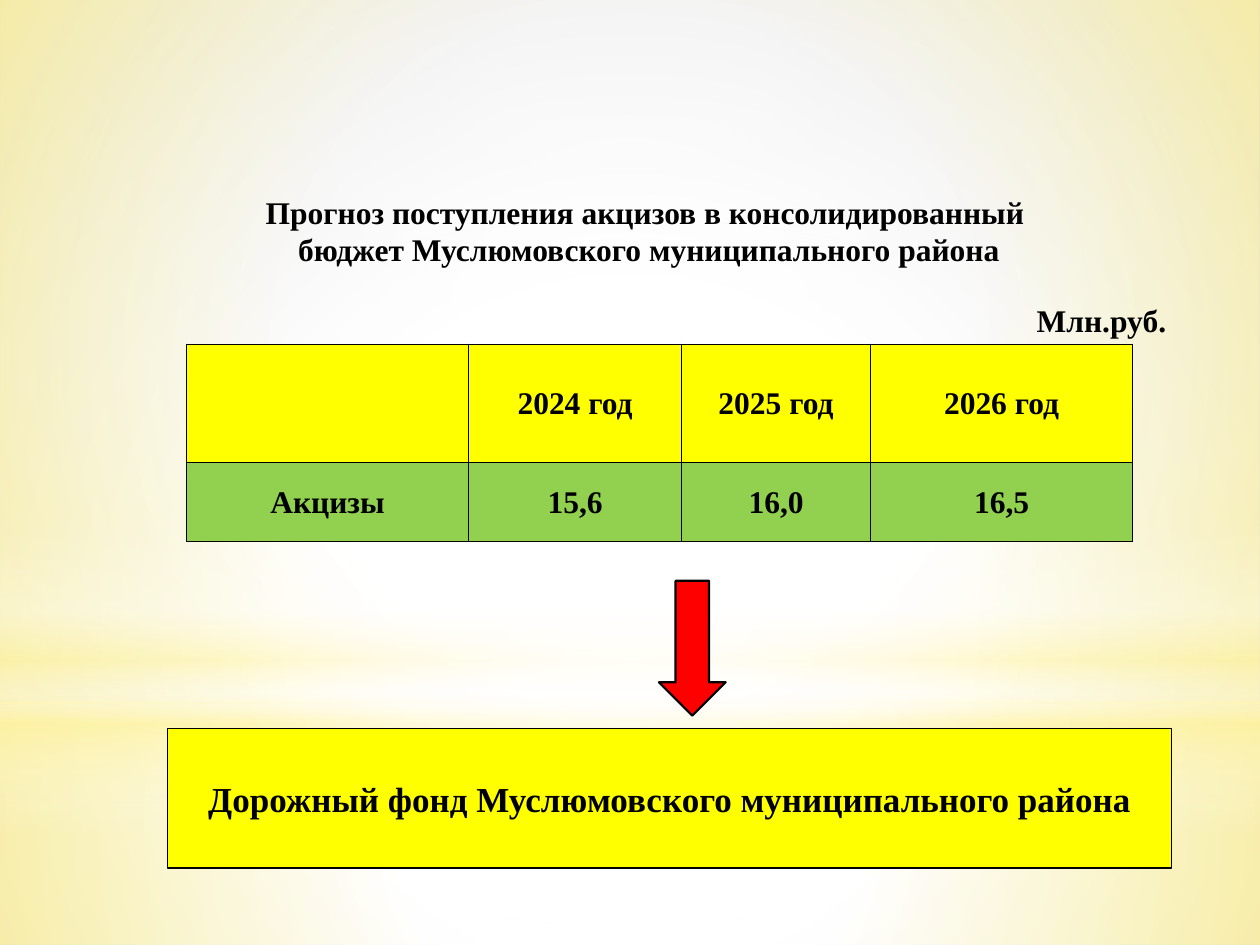
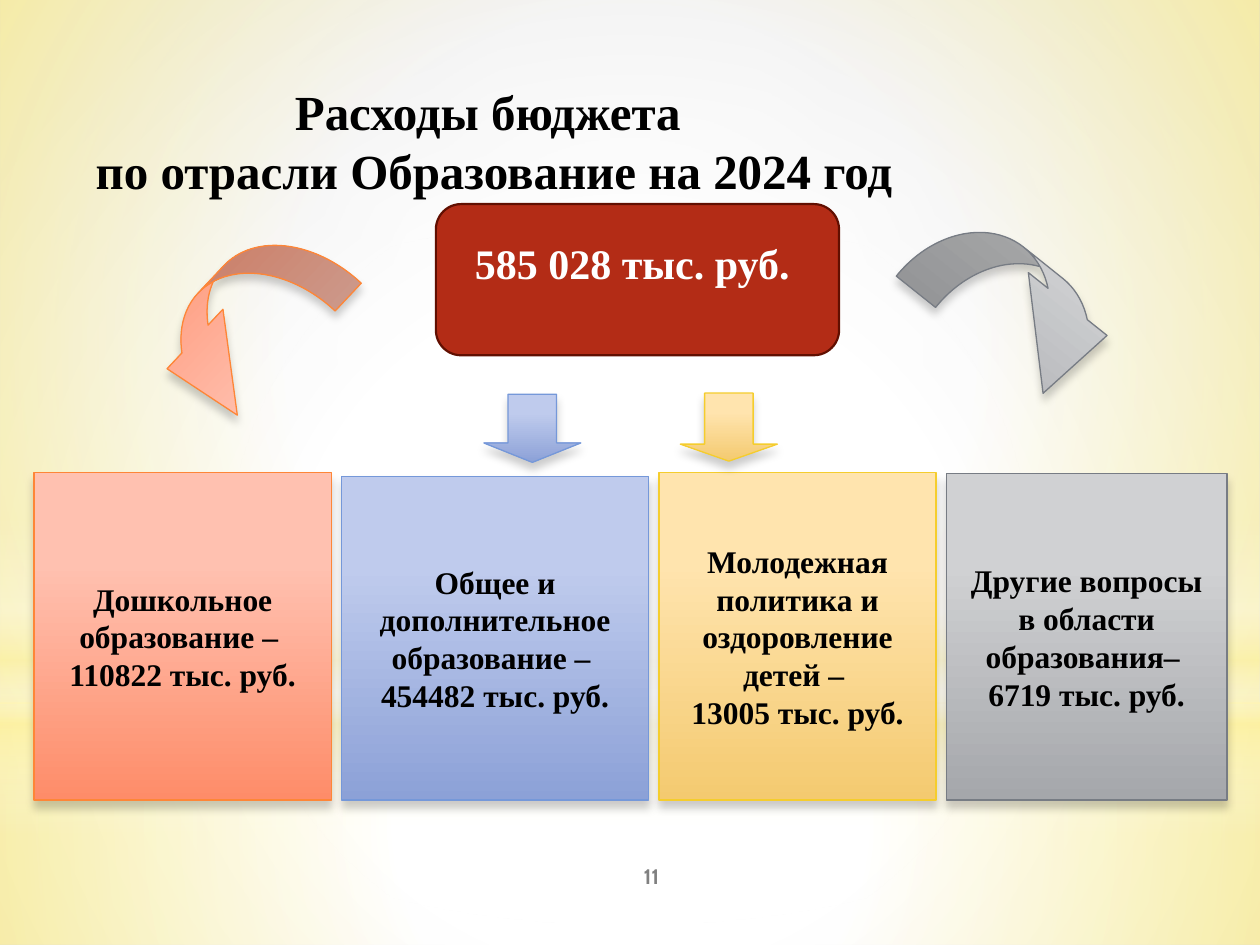
from lxml import etree
from pptx import Presentation
from pptx.dml.color import RGBColor
from pptx.enum import shapes, text
from pptx.oxml import ns
from pptx.util import Inches, Pt

SERIF = "Times New Roman"
BLACK, WHITE, YELLOW, GREEN, RED = "000000", "FFFFFF", "FFFF00", "92D050", "FF0000"
GLOW, BRICK, BRICK_EDGE, PAGE_GREY = "FFF39D", "B32C16", "610F01", "808080"
CORAL = ("FFC1B0", "FE8C69", "FE8637")
BLUE = ("BFCBED", "8CA1D7", "7598D9")
AMBER = ("FFE4AE", "F4CA70", "F5CD2D")
GREY = ("D0D1D3", "A5A7AB", "777C84")
CENTRE = (50, 50, 50, 50)
FORMS = shapes.MSO_SHAPE
MIDDLE = text.MSO_ANCHOR.MIDDLE


def colour(code):
    return RGBColor.from_string(code)


def child(parent, tag, **attributes):
    element = etree.SubElement(parent, ns.qn(tag))
    for key, value in attributes.items():
        element.set(key, str(value))
    return element


def paint_gradient(fill, holder, stops, focus=None):
    fill.solid()
    plain = holder.find(ns.qn("a:solidFill"))
    gradient = etree.Element(ns.qn("a:gradFill"), rotWithShape="1")
    stop_list = child(gradient, "a:gsLst")
    for place, code, opacity in stops:
        stop = child(stop_list, "a:gs", pos=place * 1000)
        tint = child(stop, "a:srgbClr", val=code)
        if opacity < 100:
            child(tint, "a:alpha", val=opacity * 1000)
    if focus:
        route = child(gradient, "a:path", path="circle")
        sides = {side: share * 1000 for side, share in zip("ltrb", focus)}
        child(route, "a:fillToRect", **sides)
    else:
        child(gradient, "a:lin", ang=5400000, scaled=0)
    holder.replace(plain, gradient)


def write(frame, paragraphs, size, code=BLACK, font=SERIF, align=text.PP_ALIGN.CENTER,
          anchor=text.MSO_ANCHOR.TOP, insets=(0.1, 0.05, 0.1, 0.05), wrap=True):
    frame.word_wrap = wrap
    frame.vertical_anchor = anchor
    (frame.margin_left, frame.margin_top,
     frame.margin_right, frame.margin_bottom) = map(Inches, insets)
    for index, lines in enumerate(paragraphs):
        paragraph = frame.paragraphs[0] if index == 0 else frame.add_paragraph()
        paragraph.alignment = align
        for number, line in enumerate(lines.split("\n")):
            if number:
                paragraph.add_line_break()
            run = paragraph.add_run()
            run.text = line
            run.font.name, run.font.size, run.font.bold = font, Pt(size), True
            run.font.color.rgb = colour(code)


def label(slide, box, paragraphs, size, **style):
    caption = slide.shapes.add_textbox(*map(Inches, box))
    write(caption.text_frame, paragraphs, size, **style)


def block(slide, form, box, fill=None, edge=None, weight=0.75):
    figure = slide.shapes.add_shape(form, *map(Inches, box))
    figure.shadow.inherit = False
    if fill:
        figure.fill.solid()
        figure.fill.fore_color.rgb = colour(fill)
    if edge:
        figure.line.color.rgb = colour(edge)
        figure.line.width = Pt(weight)
    else:
        figure.line.fill.background()
    return figure


def raised(slide, form, box, palette, adjustments=(), rotation=0):
    light, deep, edge = palette
    figure = block(slide, form, box, edge=edge)
    figure.rotation = rotation
    for index, value in enumerate(adjustments):
        figure.adjustments[index] = value
    properties = figure._element.spPr
    paint_gradient(figure.fill, properties, [(28, light, 100), (100, deep, 100)])
    shadow = child(properties.find(ns.qn("a:effectLst")), "a:outerShdw",
                   blurRad=Pt(5), dist=Pt(4), dir=5400000, rotWithShape=0)
    child(child(shadow, "a:srgbClr", val=BLACK), "a:alpha", val=20000)
    return figure


def dress_master(master, slide):
    background = master.background.fill
    background.solid()
    holder = master._element.find(".//" + ns.qn("p:bgPr"))
    paint_gradient(background, holder,
                   [(0, WHITE, 100), (42, WHITE, 100), (100, "D1D1D1", 100)], (24, 44, 24, 12))
    veils = [
        (FORMS.RECTANGLE, (0, 5.58, 10, 1.92),
         [(0, WHITE, 91), (37, WHITE, 76), (100, GLOW, 79)], CENTRE),
        (FORMS.RECTANGLE, (0, 0, 10, 5.58),
         [(0, WHITE, 89), (48, WHITE, 62), (100, GLOW, 79)], CENTRE),
        (FORMS.RECTANGLE, (0, 4.12, 10, 2.5),
         [(0, WHITE, 0), (29, WHITE, 30), (45, GLOW, 40),
          (55, WHITE, 26), (65, GLOW, 60), (100, WHITE, 0)], None),
        (FORMS.OVAL, (0, 1.75, 10, 5.58), [(0, WHITE, 100), (56, WHITE, 0)], CENTRE),
    ]
    for form, box, stops, focus in veils:
        veil = block(slide, form, box)
        paint_gradient(veil.fill, veil._element.spPr, stops, focus)
        master.shapes._spTree.append(veil._element)


def outline_cell(cell):
    properties = cell._tc.get_or_add_tcPr()
    for index, side in enumerate(("a:lnL", "a:lnR", "a:lnT", "a:lnB")):
        border = etree.Element(ns.qn(side), w=str(Pt(0.5)))
        child(child(border, "a:solidFill"), "a:srgbClr", val=BLACK)
        properties.insert(index, border)


def forecast_table(slide, box):
    rows = [("", "2024 год", "2025 год", "2026 год"), ("Акцизы", "15,6", "16,0", "16,5")]
    forecast = slide.shapes.add_table(2, 4, *map(Inches, box)).table
    for column, width in zip(forecast.columns, (2.24, 1.69, 1.5, 2.08)):
        column.width = Inches(width)
    for row, (values, height, fill) in enumerate(zip(rows, (0.94, 0.63), (YELLOW, GREEN))):
        forecast.rows[row].height = Inches(height)
        for column, value in enumerate(values):
            cell = forecast.cell(row, column)
            cell.fill.solid()
            cell.fill.fore_color.rgb = colour(fill)
            outline_cell(cell)
            cell.vertical_anchor = MIDDLE
            cell.margin_left = cell.margin_right = cell.margin_top = Inches(0.01)
            cell.margin_bottom = 0
            if value:
                write(cell.text_frame, [value], 18, anchor=None, insets=(0.01, 0.01, 0.01, 0))
                cell.vertical_anchor = MIDDLE


def excise_slide(slide):
    forecast_table(slide, (1.48, 2.73, 7.5, 1.57))
    label(slide, (0.94, 1.48, 8.36, 0.71),
          ["Прогноз поступления акцизов в консолидированный",
           " бюджет Муслюмовского муниципального района"], 18)
    block(slide, FORMS.DOWN_ARROW, (5.23, 4.61, 0.53, 1.07), RED, BLACK, 1.25)
    road_fund = block(slide, FORMS.RECTANGLE, (1.33, 5.78, 7.97, 1.11), YELLOW, BLACK)
    write(road_fund.text_frame, ["Дорожный фонд Муслюмовского муниципального района"],
          20, anchor=MIDDLE)
    label(slide, (8.13, 2.34, 1.24, 0.4), ["Млн.руб."], 18,
          align=text.PP_ALIGN.LEFT, wrap=False)


def expense_cards(slide, left, bottom, gap=0.08):
    cards = [
        (2.36, 2.6, CORAL, ["Дошкольное образование – ", "110822 тыс. руб."]),
        (2.44, 2.57, BLUE, ["Общее и дополнительное", "образование – \n454482 тыс. руб."]),
        (2.2, 2.6, AMBER, ["Молодежная политика и оздоровление детей – ", "13005 тыс. руб."]),
        (2.23, 2.59, GREY, ["Другие вопросы в области образования– ", "6719 тыс. руб."]),
    ]
    for width, height, palette, wording in cards:
        card = raised(slide, FORMS.RECTANGLE, (left, bottom - height, width, height), palette)
        write(card.text_frame, wording, 18, anchor=MIDDLE, insets=(0.12, 0, 0.12, 0))
        left += width + gap


def education_slide(slide):
    total = block(slide, FORMS.ROUNDED_RECTANGLE, (3.46, 1.62, 3.2, 1.2),
                  BRICK, BRICK_EDGE, 1.25)
    write(total.text_frame, ["585 028 тыс. руб. "], 24, code=WHITE, anchor=MIDDLE,
          insets=(0.14, 0.05, 0.14, 0.32))
    expense_cards(slide, 0.27, 6.35)
    raised(slide, FORMS.CURVED_UP_ARROW, (1.06, 2.14, 1.76, 0.89), CORAL,
           (0.34, 0.727, 0.74), 133.2)
    raised(slide, FORMS.CURVED_DOWN_ARROW, (7.16, 2.06, 1.89, 0.81), GREY,
           (0.492, 0.987, 0.834), 38.6)
    raised(slide, FORMS.DOWN_ARROW, (5.4, 3.12, 0.77, 0.54), AMBER, (0.5, 0.25))
    raised(slide, FORMS.DOWN_ARROW, (3.84, 3.13, 0.77, 0.54), BLUE, (0.5, 0.285))
    label(slide, (4.17, 6.75, 2, 0.4), ["11"], 12, code=PAGE_GREY, font="Cabin", anchor=MIDDLE)
    label(slide, (0.55, 0.6, 6.74, 1.04),
          ["Расходы бюджета \nпо отрасли Образование на 2024 год"], 28)


def main():
    deck = Presentation()
    deck.slide_width, deck.slide_height = Inches(10), Inches(7.5)
    blank = deck.slide_layouts[6]
    excise, education = (deck.slides.add_slide(blank) for _ in range(2))
    dress_master(deck.slide_master, excise)
    excise_slide(excise)
    education_slide(education)
    deck.save("out.pptx")


if __name__ == "__main__":
    main()
